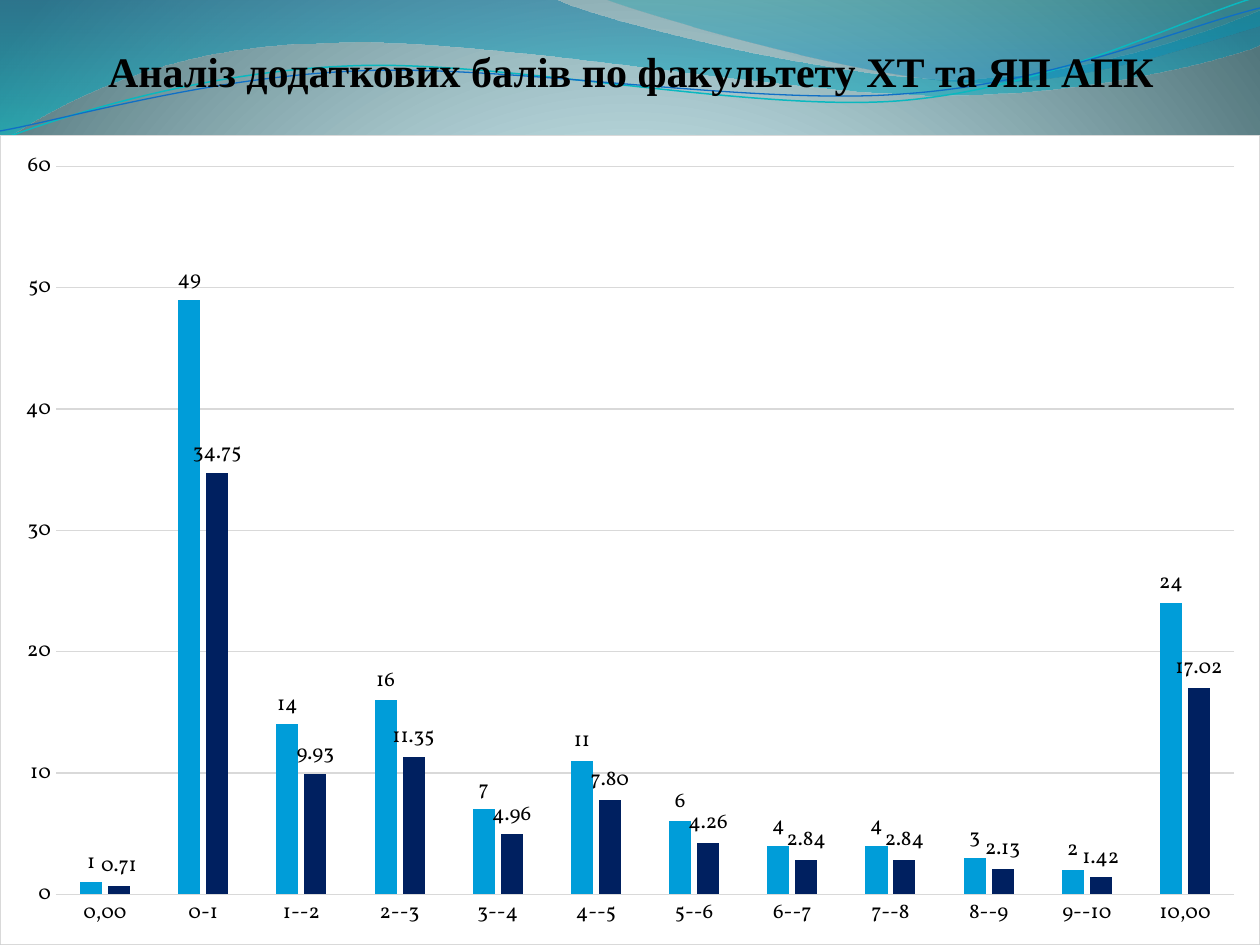
from math import cos, radians, sin

from pptx import Presentation
from pptx.chart.data import CategoryChartData
from pptx.dml.color import RGBColor
from pptx.enum.chart import XL_CHART_TYPE, XL_LABEL_POSITION, XL_TICK_MARK
from pptx.enum.text import MSO_ANCHOR, PP_ALIGN
from pptx.oxml import parse_xml
from pptx.oxml.ns import nsdecls, qn
from pptx.util import Pt

CLUSTERED = XL_CHART_TYPE.COLUMN_CLUSTERED
OUTSIDE_END = XL_LABEL_POSITION.OUTSIDE_END
NO_TICK = XL_TICK_MARK.NONE
BOTTOM = MSO_ANCHOR.BOTTOM
CENTER = PP_ALIGN.CENTER

EMU_PER_PX = 914400 / 126
WIDTH, HEIGHT = 1260, 945
WAVE_TILT = -2.7

BLACK, WHITE, GRID_GREY = "000000", "FFFFFF", "D9D9D9"
DOWNWARD = '<a:lin ang="5400000" scaled="1"/>'
FROM_BELOW = ('<a:path path="circle"><a:fillToRect l="10000" t="110000" '
              'r="10000" b="100000"/></a:path>')


def px(length):
    return round(length * EMU_PER_PX)


def rgb(value):
    return RGBColor.from_string(value)


def turn(point, center, degrees):
    c, s = cos(radians(degrees)), sin(radians(degrees))
    dx, dy = point[0] - center[0], point[1] - center[1]
    return center[0] + dx * c - dy * s, center[1] + dx * s + dy * c


def set_gradient(owner, stops, direction):
    """Replace the gradient of an element; stops are (percent, colour, opacity)."""
    stop_xml = "".join(
        f'<a:gs pos="{pos * 1000}"><a:srgbClr val="{color}">'
        f'<a:alpha val="{opacity * 1000}"/></a:srgbClr></a:gs>'
        for pos, color, opacity in stops)
    old = owner.find(".//" + qn("a:gradFill"))
    old.getparent().replace(old, parse_xml(
        f'<a:gradFill {nsdecls("a")} rotWithShape="1"><a:gsLst>{stop_xml}</a:gsLst>'
        f'{direction}</a:gradFill>'))


def bend(shape, steps):
    """Join the three line segments of each three-point step into a cubic curve."""
    segments = iter(shape._element.findall(".//" + qn("a:lnTo")))
    for step in steps:
        group = [next(segments) for _ in step]
        if len(group) == 3:
            curve = parse_xml(f'<a:cubicBezTo {nsdecls("a")}/>')
            group[0].addprevious(curve)
            for segment in group:
                curve.append(segment[0])
                segment.getparent().remove(segment)


class Deck:
    def __init__(self, font, heading_font):
        self.font, self.heading_font = font, heading_font
        self.prs = Presentation()
        self.prs.slide_width, self.prs.slide_height = px(WIDTH), px(HEIGHT)
        self.slide = self.prs.slides.add_slide(self.prs.slide_layouts[6])

    def background(self, stops):
        self.slide.background.fill.gradient()
        set_gradient(self.slide._element, stops, FROM_BELOW)

    def freeform(self, start, steps, close):
        """Steps hold one point for a line, three for a curve."""
        builder = self.slide.shapes.build_freeform(*map(px, start), scale=1.0)
        builder.add_line_segments(
            [(px(x), px(y)) for step in steps for x, y in step], close=close)
        shape = builder.convert_to_shape()
        bend(shape, steps)
        shape.shadow.inherit = False
        return shape

    def band(self, start, steps, stops):
        shape = self.freeform(start, steps, True)
        shape.line.fill.background()
        shape.fill.gradient()
        set_gradient(shape._element, stops, DOWNWARD)

    def ripple(self, start, steps, center, color, weight):
        level_steps = [[turn(point, center, -WAVE_TILT) for point in step]
                       for step in steps]
        shape = self.freeform(turn(start, center, -WAVE_TILT), level_steps, False)
        shape.rotation = WAVE_TILT
        shape.fill.background()
        shape.line.color.rgb = rgb(color)
        shape.line.width = Pt(weight)

    def heading(self, text, left, top, width, height):
        frame = self.slide.shapes.add_textbox(
            px(left), px(top), px(width), px(height)).text_frame
        frame.word_wrap = True
        frame.vertical_anchor = BOTTOM
        frame.margin_left = frame.margin_right = frame.margin_bottom = 0
        frame.margin_top = px(6)
        paragraph = frame.paragraphs[0]
        paragraph.alignment = CENTER
        run = paragraph.add_run()
        run.text = text
        run.font.name, run.font.size, run.font.bold = self.heading_font, Pt(24), True
        run.font.color.rgb = rgb(BLACK)

    def columns(self, categories, series, left, top, width, height):
        """Clustered columns; series are (name, values, colour, number format)."""
        data = CategoryChartData()
        data.categories = categories
        for name, values, _, _ in series:
            data.add_series(name, values)
        chart = self.slide.shapes.add_chart(
            CLUSTERED, px(left), px(top), px(width), px(height), data).chart
        chart.has_title = chart.has_legend = False
        chart.font.name, chart.font.size = self.font, Pt(12)
        chart.font.color.rgb = rgb(BLACK)

        # Chart area
        chart._chartSpace.find(qn("c:chart")).addnext(parse_xml(
            f'<c:spPr {nsdecls("c", "a")}><a:solidFill><a:srgbClr val="{WHITE}"/>'
            f'</a:solidFill><a:ln w="{Pt(0.75)}"><a:solidFill>'
            f'<a:srgbClr val="{GRID_GREY}"/></a:solidFill></a:ln></c:spPr>'))

        # Axes
        scores, counts = chart.category_axis, chart.value_axis
        for axis in (scores, counts):
            axis.major_tick_mark = axis.minor_tick_mark = NO_TICK
        counts.minimum_scale, counts.maximum_scale, counts.major_unit = 0, 60, 10
        counts.format.line.fill.background()
        for line in (scores.format.line, counts.major_gridlines.format.line):
            line.color.rgb = rgb(GRID_GREY)
            line.width = Pt(0.75)

        # Columns and their labels
        plot = chart.plots[0]
        plot.vary_by_categories = False
        plot.gap_width, plot.overlap = 219, -27
        for column, (_, _, color, number_format) in zip(plot.series, series):
            column.format.fill.solid()
            column.format.fill.fore_color.rgb = rgb(color)
            labels = column.data_labels
            labels.show_value = True
            labels.position = OUTSIDE_END
            labels.number_format = number_format
            labels.number_format_is_linked = False


def main():
    deck = Deck("Vollkorn", "Times New Roman")
    deck.background([(0, "DEFBFF", 100), (25, "DDFAFF", 100), (100, "52767C", 100)])

    # Wave bands across the top
    deck.band((0, 0), [[(554, -1)],
                       [(600, 21), (837, 79), (955, 79)],
                       [(1075, 79), (1207, 33), (1260, 11)],
                       [(1261, 45)],
                       [(1239, 55), (1096, 96), (940, 95)],
                       [(783, 95), (481, 35), (324, 43)],
                       [(161, 45), (58, 105), (-1, 142)],
                       [(0, 0)]],
              [(0, "0074A1", 45), (100, "00C6CF", 55)])
    deck.band((604, -1), [[(641, 14), (859, 78), (969, 82)],
                          [(1079, 87), (1211, 40), (1260, 26)],
                          [(1260, 0)],
                          [(604, -1)]],
              [(0, "00A1A9", 30), (80, "008BBF", 45)])

    # Thin ripples over the bands
    deck.ripple((0, 140), [[(60, 117), (199, 72), (349, 66)],
                           [(498, 59), (747, 112), (898, 101)],
                           [(1050, 89), (1182, 19), (1257, -3)]],
                (629, 72), "0AB8BF", 0.85)
    deck.ripple((0, 131), [[(59, 121), (207, 77), (357, 71)],
                           [(508, 64), (752, 106), (903, 94)],
                           [(1053, 84), (1185, 26), (1260, 8)]],
                (630, 74), "0F6FC6", 0.75)

    # Title and score distribution
    deck.heading("Аналіз додаткових балів по факультету ХТ та ЯП АПК", 64, 17, 1134, 79)
    score_ranges = ["0,00", "0-1", *(f"{n}--{n + 1}" for n in range(1, 10)), "10,00"]
    counts = (1, 49, 14, 16, 7, 11, 6, 4, 4, 3, 2, 24)
    shares = (0.71, 34.75, 9.93, 11.35, 4.96, 7.8, 4.26, 2.84, 2.84, 2.13, 1.42, 17.02)
    deck.columns(score_ranges, [("Series 1", counts, "009DD9", "General"),
                                ("Series 2", shares, "002060", "0.00")],
                 0, 135, WIDTH, 810)
    deck.prs.save("out.pptx")


if __name__ == "__main__":
    main()
